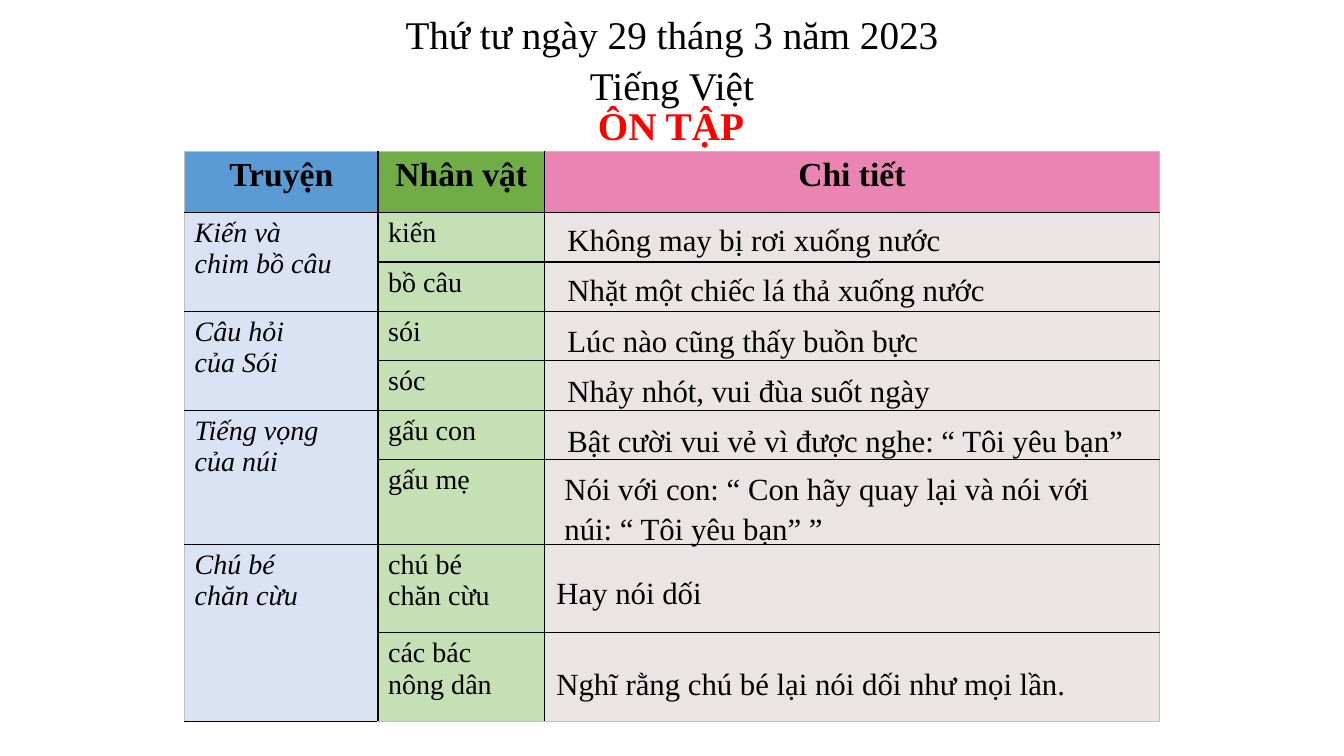
from dataclasses import dataclass

from lxml import etree
from pptx import Presentation
from pptx import util as u
from pptx.dml.color import RGBColor
from pptx.enum import text as t
from pptx.oxml.ns import qn

PX = 9144  # EMU per px, 100 px to the inch


@dataclass(frozen=True)
class Theme:
    font: str = "Times New Roman"
    ink: str = "000000"
    title: str = "FF0000"
    headers: tuple[str, ...] = ("5B9BD5", "70AD47", "EA84B2")
    columns: tuple[str, ...] = ("DAE3F3", "C5E0B4", "EAE4E5")
    frame: str = "BFBFBF"
    heading_size: int = 28
    header_size: int = 24
    detail_size: int = 22
    cell_size: int = 20


@dataclass(frozen=True)
class Box:
    left: int
    top: int
    width: int
    height: int

    def emu(self) -> list[int]:
        return [v * PX for v in (self.left, self.top, self.width, self.height)]


@dataclass(frozen=True)
class Story:
    name: str
    characters: tuple[str, str]


@dataclass(frozen=True)
class Detail:
    text: str
    box: Box


THEME = Theme()
HEADERS = ("Truyện", "Nhân vật", "Chi tiết")
COLUMN_WIDTHS = (192, 165, 610)
ROW_HEIGHTS = (61, 49, 49, 49, 49, 49, 84, 88, 88)
TABLE_BOX = Box(183, 150, sum(COLUMN_WIDTHS), sum(ROW_HEIGHTS))
STORIES = (
    Story("Kiến và\nchim bồ câu", ("kiến", "bồ câu")),
    Story("Câu hỏi\ncủa Sói", ("sói", "sóc")),
    Story("Tiếng vọng\ncủa núi", ("gấu con", "gấu mẹ")),
    Story("Chú bé\nchăn cừu", ("chú bé\nchăn cừu", "các bác\nnông dân")),
)
SHORT_DETAILS = (
    ("Không may bị rơi xuống nước", 475),
    ("Nhặt một chiếc lá thả xuống nước", 475),
    ("Lúc nào cũng thấy buồn bực", 475),
    ("Nhảy nhót, vui đùa suốt ngày", 475),
    ("Bật cười vui vẻ vì được nghe: “ Tôi yêu bạn”", 580),
)
DETAILS = (
    *(Detail(line, Box(553, 211 + 50 * i, width, 47))
      for i, (line, width) in enumerate(SHORT_DETAILS)),
    Detail("Nói với con: “ Con hãy quay lại và nói với núi: “ Tôi yêu bạn” ”",
           Box(550, 458, 583, 84)),
    Detail("Hay nói dối", Box(542, 561, 475, 47)),
    Detail("Nghĩ rằng chú bé lại nói dối như mọi lần.", Box(542, 652, 592, 47)),
)


def write(frame, content: str, *, size: int, color: str = THEME.ink,
          bold: bool = False, italic: bool = False, centered: bool = False,
          spacing: float = 1.0) -> None:
    """Fill a text frame, one paragraph per line of content."""
    for i, line in enumerate(content.split("\n")):
        paragraph = frame.add_paragraph() if i else frame.paragraphs[0]
        paragraph.alignment = t.PP_ALIGN.CENTER if centered else t.PP_ALIGN.LEFT
        paragraph.line_spacing = spacing
        run = paragraph.add_run()
        run.text = line
        run.font.name = THEME.font
        run.font.size = u.Pt(size)
        run.font.bold, run.font.italic = bold, italic
        run.font.color.rgb = RGBColor.from_string(color)


def add_text(slide, box: Box, content: str, *, size: int,
             centered: bool = False) -> None:
    frame = slide.shapes.add_textbox(*box.emu()).text_frame
    frame.word_wrap = True
    write(frame, content, size=size, centered=centered, spacing=1.08)


def add_title(slide, box: Box, content: str) -> None:
    title = slide.shapes.title
    title.left, title.top, title.width, title.height = box.emu()
    frame = title.text_frame
    frame.word_wrap = True
    frame.auto_size = t.MSO_AUTO_SIZE.NONE
    frame.vertical_anchor = t.MSO_ANCHOR.TOP
    write(frame, content, size=THEME.heading_size, color=THEME.title, bold=True,
          spacing=1.08)


def set_border(cell, side: str, color: str) -> None:
    line = etree.SubElement(cell._tc.get_or_add_tcPr(), qn(f"a:ln{side}"),
                            w=str(u.Pt(1)))
    fill = etree.SubElement(line, qn("a:solidFill"))
    etree.SubElement(fill, qn("a:srgbClr"), val=color)


def style_cell(table, row: int, column: int) -> None:
    """Black inner borders, grey outer frame, column colour."""
    cell = table.cell(row, column)
    on_edge = {"L": column == 0, "R": column == len(COLUMN_WIDTHS) - 1,
               "T": row == 0, "B": row == len(ROW_HEIGHTS) - 1}
    for side, outer in on_edge.items():
        set_border(cell, side, THEME.frame if outer else THEME.ink)
    palette = THEME.columns if row else THEME.headers
    cell.fill.solid()
    cell.fill.fore_color.rgb = RGBColor.from_string(palette[column])


def add_story_table(slide) -> None:
    table = slide.shapes.add_table(len(ROW_HEIGHTS), len(COLUMN_WIDTHS),
                                   *TABLE_BOX.emu()).table
    table.first_row = table.horz_banding = False
    for column, width in zip(table.columns, COLUMN_WIDTHS):
        column.width = width * PX
    for row, height in zip(table.rows, ROW_HEIGHTS):
        row.height = height * PX
    for r in range(len(ROW_HEIGHTS)):
        for c in range(len(COLUMN_WIDTHS)):
            style_cell(table, r, c)

    for c, header in enumerate(HEADERS):
        write(table.cell(0, c).text_frame, header, size=THEME.header_size,
              bold=True, centered=True)
    # Each story spans the rows of its two characters
    for i, story in enumerate(STORIES):
        first = 1 + 2 * i
        table.cell(first, 0).merge(table.cell(first + 1, 0))
        write(table.cell(first, 0).text_frame, story.name,
              size=THEME.cell_size, italic=True)
        for r, character in enumerate(story.characters, first):
            write(table.cell(r, 1).text_frame, character, size=THEME.cell_size)


def main() -> None:
    deck = Presentation()
    deck.slide_width, deck.slide_height = 1333 * PX, 750 * PX
    slide = deck.slides.add_slide(deck.slide_layouts.get_by_name("Title Only"))

    # Lesson title and story table
    add_title(slide, Box(583, 92, 175, 57), "ÔN TẬP")
    add_story_table(slide)

    # Details laid over the third column
    for detail in DETAILS:
        add_text(slide, detail.box, detail.text, size=THEME.detail_size)

    # Date and subject
    add_text(slide, Box(308, 2, 717, 104),
             "Thứ tư ngày 29 tháng 3 năm 2023\nTiếng Việt",
             size=THEME.heading_size, centered=True)
    deck.save("out.pptx")


if __name__ == "__main__":
    main()
